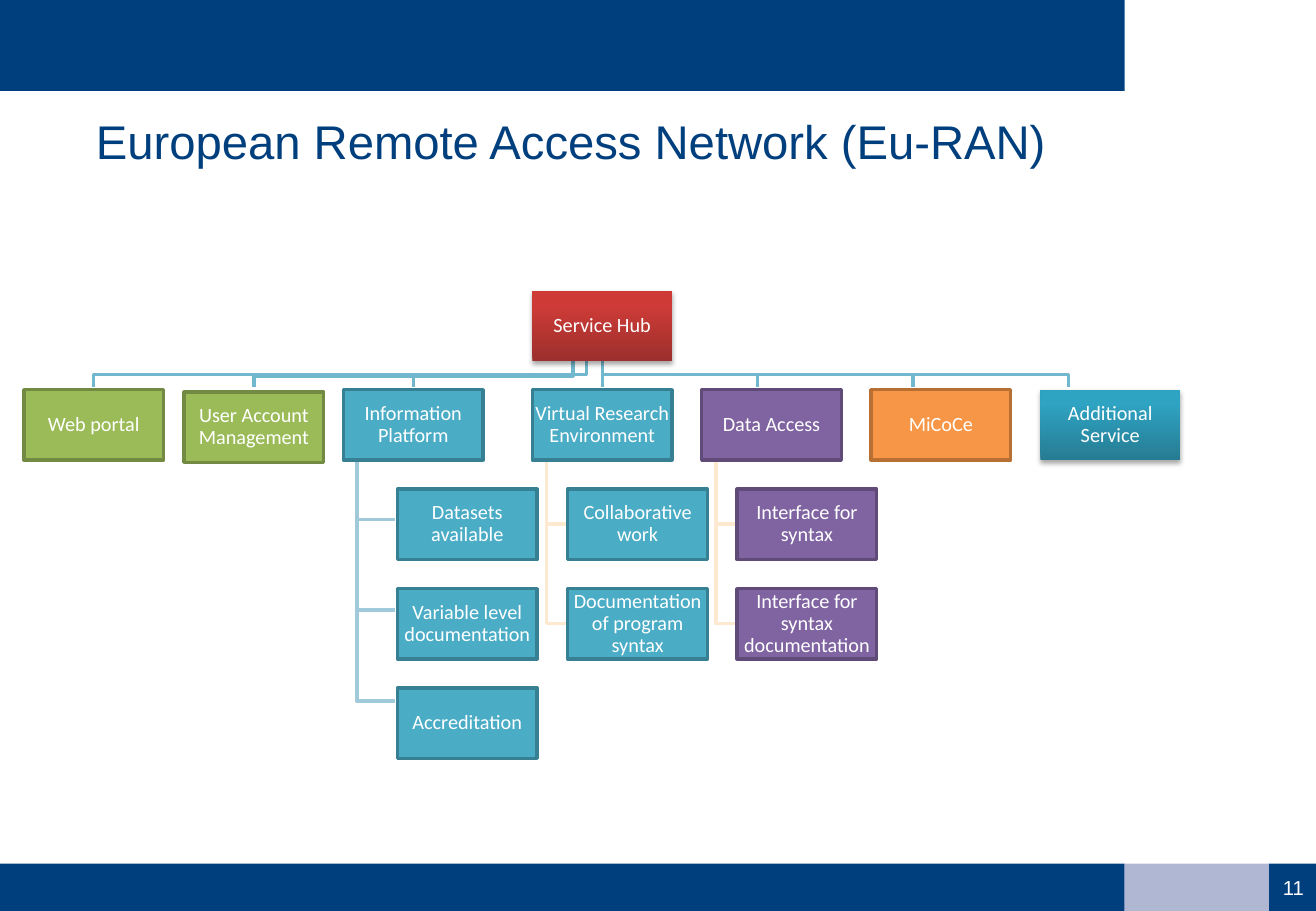
import dataclasses

import pptx
import pptx.dml.color
import pptx.enum.shapes
import pptx.enum.text
import pptx.oxml
import pptx.oxml.ns
import pptx.util

Cm = pptx.util.Cm
Pt = pptx.util.Pt
Align = pptx.enum.text.PP_ALIGN
RECT = pptx.enum.shapes.MSO_SHAPE.RECTANGLE


@dataclasses.dataclass
class Theme:
    navy: str = "003F7D"
    pale: str = "B0B7D3"
    white: str = "FFFFFF"
    green: tuple = ("9BBB59", "738A42")
    teal: tuple = ("4BACC6", "377F92")
    violet: tuple = ("8064A2", "5F4A78")
    orange: tuple = ("F79646", "B76F34")
    red_fade: tuple = ("9C2F2D", "CE3B37")
    teal_fade: tuple = ("267C93", "2FA3C2")
    hub_wire: str = "71B7CD"
    teal_wire: str = "A0CAD9"
    cream_wire: str = "FCE9CF"
    head_font: str = "Arial"
    node_font: str = "Calibri"
    head_size: int = 28
    text_size: int = 12
    stroke: int = 2


@dataclasses.dataclass
class Box:
    x: float
    y: float
    w: float
    h: float

    def place(self):
        return [Cm(n) for n in (self.x, self.y, self.w, self.h)]


theme = Theme()


def color(code):
    return pptx.dml.color.RGBColor.from_string(code)


def write(frame, text, font, size, ink, align):
    frame.text = text
    frame.word_wrap = True
    frame.auto_size = pptx.enum.text.MSO_AUTO_SIZE.NONE
    frame.vertical_anchor = pptx.enum.text.MSO_ANCHOR.MIDDLE
    line = frame.paragraphs[0]
    line.alignment = align
    for run in line.runs:
        run.font.name = font
        run.font.size = Pt(size)
        run.font.color.rgb = color(ink)


def block(slide, box, fill):
    shape = slide.shapes.add_shape(RECT, *box.place())
    shape.shadow.inherit = False
    shape.fill.solid()
    shape.fill.fore_color.rgb = color(fill)
    shape.line.fill.background()
    return shape


def fade(shape, tones):
    shape.fill.gradient()
    shape.fill.gradient_angle = 90
    for stop, tone, spot in zip(shape.fill.gradient_stops, tones, (0, 0.8)):
        stop.color.rgb = color(tone)
        stop.position = spot
    effects = shape._element.spPr.find(pptx.oxml.ns.qn("a:effectLst"))
    effects.append(pptx.oxml.parse_xml(
        f'<a:outerShdw {pptx.oxml.ns.nsdecls("a")} blurRad="{Pt(3.1)}" dist="{Pt(1.8)}" '
        'dir="5400000" rotWithShape="0"><a:srgbClr val="000000">'
        '<a:alpha val="35000"/></a:srgbClr></a:outerShdw>'))


def node(slide, box, text, tones, faded=False):
    shape = block(slide, box, tones[0])
    if faded:
        fade(shape, tones)
    else:
        shape.line.color.rgb = color(tones[1])
        shape.line.width = Pt(theme.stroke)
    frame = shape.text_frame
    frame.margin_left = frame.margin_right = Cm(0.03)
    frame.margin_top = frame.margin_bottom = Cm(0.03)
    write(frame, text, theme.node_font, theme.text_size, theme.white, Align.CENTER)
    frame.paragraphs[0].line_spacing = 0.9


def wire(slide, points, ink):
    spots = [(Cm(x), Cm(y)) for x, y in points]
    if len(spots) == 2:
        kind = pptx.enum.shapes.MSO_CONNECTOR.STRAIGHT
        shape = slide.shapes.add_connector(kind, *spots[0], *spots[1])
        shape._element.spPr.append(pptx.oxml.parse_xml(
            f'<a:effectLst {pptx.oxml.ns.nsdecls("a")}/>'))
    else:
        path = slide.shapes.build_freeform(*spots[0])
        path.add_line_segments(spots[1:], close=False)
        shape = path.convert_to_shape()
        shape.shadow.inherit = False
        shape.fill.background()
    shape.line.color.rgb = color(ink)
    shape.line.width = Pt(theme.stroke)


def bands(slide, box, number):
    main, tab, foot = 23.51, 3.02, 0.99
    base = box.y + box.h - foot
    block(slide, Box(box.x, box.y, main, 1.9), theme.navy)
    block(slide, Box(box.x, base, main, foot), theme.navy)
    block(slide, Box(box.x + main, base, tab, foot), theme.pale)
    left = box.x + main + tab
    page = block(slide, Box(left, base, box.x + box.w - left, foot), theme.navy)
    write(page.text_frame, number, theme.head_font, theme.text_size, theme.white, Align.RIGHT)


def head(slide, box, text):
    title = slide.shapes.title
    title.left, title.top, title.width, title.height = box.place()
    write(title.text_frame, text, theme.head_font, theme.head_size, theme.navy, Align.LEFT)


def branch(slide, box, texts, tones, ink, inset, indent, first, step, gap):
    stem = box.x + inset
    for row in reversed(range(len(texts))):
        level = first + row * step
        wire(slide, [(stem, box.y + box.h), (stem, level), (box.x + indent - gap, level)], ink)
    for row, text in enumerate(texts):
        node(slide, Box(box.x + indent, box.y + 2.08 * (row + 1), box.w, box.h), text, tones)


def tree(slide, box):
    wide, high, pitch = 2.92, 1.47, 3.54
    hub = Box(box.x + 10.63, box.y, wide, high)
    row = box.y + 2.06
    base, bend, tip = hub.y + hub.h, hub.y + 1.74, row - 0.05
    stem = hub.x + wide / 2
    lefts = [box.x, box.x + 3.35, box.x + 6.68] + [hub.x + pitch * i for i in range(4)]
    tops = [Box(x, row, wide, high) for x in lefts]
    tops[1].y += 0.05

    for i in (3, 2, 1):
        end = stem + 3.25 * i
        wire(slide, [(stem, base), (stem, bend), (end, bend), (end, tip)], theme.hub_wire)
    wire(slide, [(stem, base), (stem, tip)], theme.hub_wire)
    for top, start, drop in zip(tops, (0.33, 0.61, 0.33), (0, 0.03, 0)):
        end = top.x + wide / 2
        wire(slide, [(stem - start, base), (stem - start, bend + drop),
                     (end, bend + drop), (end, tip)], theme.hub_wire)

    branch(slide, tops[2], ["Datasets available", "Variable level documentation", "Accreditation"],
           theme.teal, theme.teal_wire, 0.28, 1.13, row + 2.71, 1.9, 0.05)
    pairs = [
        (tops[3], ["Collaborative work", "Documentation of program syntax"], theme.teal),
        (tops[4], ["Interface for syntax", "Interface for syntax documentation"], theme.violet),
    ]
    for top, texts, tones in pairs:
        branch(slide, top, texts, tones, theme.cream_wire, 0.3, 0.74, row + 2.81, 2.08, 0)

    node(slide, hub, "Service Hub", theme.red_fade, True)
    labels = [
        ("Web portal", theme.green),
        ("User Account Management", theme.green),
        ("Information Platform", theme.teal),
        ("Virtual Research Environment", theme.teal),
        ("Data Access", theme.violet),
        ("MiCoCe", theme.orange),
        ("Additional Service", theme.teal_fade),
    ]
    for top, (text, tones) in zip(tops, labels):
        node(slide, top, text, tones, tones is theme.teal_fade)


def main():
    deck = pptx.Presentation()
    deck.slide_width, deck.slide_height = Cm(27.51), Cm(19.05)
    slide = deck.slides.add_slide(deck.slide_layouts.get_by_name("Title Only"))
    bands(slide, Box(0, 0, 27.51, 19.05), "11")
    head(slide, Box(1.75, 1.93, 21.9, 2), "European Remote Access Network (Eu-RAN)")
    tree(slide, Box(0.5, 6.09, 24.2, 9.8))
    deck.save("out.pptx")


if __name__ == "__main__":
    main()
